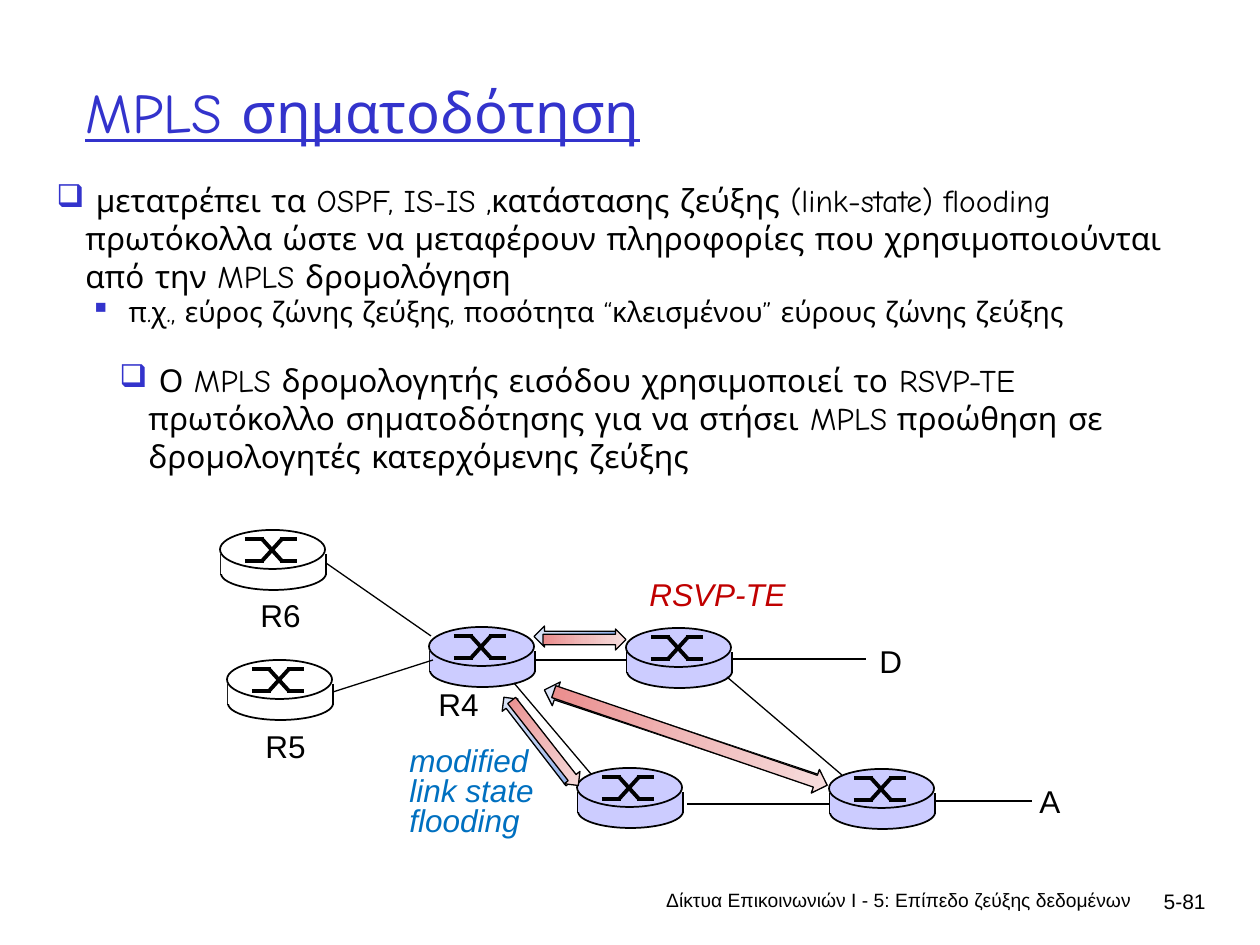
from copy import deepcopy

from lxml.etree import SubElement
from pptx import Presentation
from pptx.dml.color import RGBColor
from pptx.enum.shapes import MSO_CONNECTOR, MSO_SHAPE as Shape
from pptx.enum.text import MSO_ANCHOR as Anchor, PP_ALIGN as Align
from pptx.oxml.ns import qn
from pptx.util import Pt

EMU_PER_PX = 914400 / 126

BLACK = RGBColor(0x00, 0x00, 0x00)
WHITE = RGBColor(0xFF, 0xFF, 0xFF)
INDIGO = RGBColor(0x33, 0x33, 0xCC)
LAVENDER = RGBColor(0xCC, 0xCC, 0xFF)
BLUE = RGBColor(0x00, 0x70, 0xC0)
RED = RGBColor(0xC0, 0x00, 0x00)
BLUE_FADE = [RGBColor.from_string(c) for c in ("8CADEA", "BACCF0", "DEE6F7")]
RED_FADE = [RGBColor.from_string(c) for c in ("EA8C8C", "F0BABA", "F7DEDE")]

HANGING = 29


def px(length):
    return round(length * EMU_PER_PX)


def format_run(run, size, font, color, italic=False, underline=False):
    run.font.size = Pt(size)
    run.font.name = font
    run.font.color.rgb = color
    run.font.italic = italic
    run.font.underline = underline


def add_text(shapes, text, left, top, width, height, *, size=18, font="Arial",
             color=BLACK, italic=False, underline=False, align=Align.LEFT,
             anchor=Anchor.TOP, wrap=False, spacing=None):
    box = shapes.add_textbox(px(left), px(top), px(width), px(height))
    frame = box.text_frame
    frame.word_wrap = wrap
    frame.vertical_anchor = anchor
    for number, line in enumerate(text.split("\n")):
        paragraph = frame.add_paragraph() if number else frame.paragraphs[0]
        paragraph.alignment = align
        if spacing:
            paragraph.line_spacing = Pt(spacing)
        run = paragraph.add_run()
        run.text = line
        format_run(run, size, font, color, italic, underline)
    return frame


def add_bullet(paragraph, mark, margin):
    properties = paragraph._p.get_or_add_pPr()
    properties.set("marL", str(px(margin)))
    properties.set("indent", str(px(-HANGING)))
    bullet_color = SubElement(properties, qn("a:buClr"))
    SubElement(bullet_color, qn("a:srgbClr")).set("val", str(INDIGO))
    SubElement(properties, qn("a:buChar")).set("char", mark)


def add_line(shapes, x1, y1, x2, y2, weight=0.75):
    line = shapes.add_connector(MSO_CONNECTOR.STRAIGHT, px(x1), px(y1), px(x2), px(y2))
    line.line.color.rgb = BLACK
    line.line.width = Pt(weight)
    SubElement(line._element.spPr, qn("a:effectLst"))


def add_solid(shapes, kind, left, top, width, height, fill, outlined=True):
    solid = shapes.add_shape(kind, px(left), px(top), px(width), px(height))
    solid.shadow.inherit = False
    solid.fill.solid()
    solid.fill.fore_color.rgb = fill
    if outlined:
        solid.line.color.rgb = BLACK
        solid.line.width = Pt(1)
    else:
        solid.line.fill.background()


def add_router(slide, left, top, fill):
    parts = slide.shapes.add_group_shape().shapes
    # Cylinder: base, sides, body, lid
    add_solid(parts, Shape.OVAL, left + 1, top + 27, 105, 33, fill)
    for side in (left + 1, left + 106):
        add_line(parts, side, top + 24, side, top + 45, 1)
    add_solid(parts, Shape.RECTANGLE, left + 1, top + 24, 104, 20, fill, outlined=False)
    add_solid(parts, Shape.OVAL, left, top, 105, 39, fill)
    # Crossed paths on the lid
    upper, lower = top + 9, top + 31
    for start, end in ((upper, lower), (lower, upper)):
        add_line(parts, left + 25, start, left + 44, start, 2.25)
        add_line(parts, left + 42, start, left + 62, end, 2.25)
        add_line(parts, left + 60, end, left + 77, end, 2.25)


def add_flow(shapes, left, top, width, height, rotation, fade):
    arrow = shapes.add_shape(Shape.RIGHT_ARROW, px(left), px(top), px(width), px(height))
    arrow.rotation = rotation
    arrow.shadow.inherit = False
    arrow.line.color.rgb = BLACK
    arrow.line.width = Pt(0.75)
    arrow.fill.gradient()
    arrow.fill.gradient_angle = 0
    stop_list = arrow._element.spPr.find(qn("a:gradFill")).find(qn("a:gsLst"))
    stop_list.insert(1, deepcopy(stop_list[0]))
    for stop, position, color in zip(arrow.fill.gradient_stops, (0, 0.5, 1), fade):
        stop.position = position
        stop.color.rgb = color


def add_body(slide):
    points = [
        ("❑", 29, 18, 0, " μετατρέπει τα OSPF, IS-IS ,κατάστασης ζεύξης (link-state) flooding "
         "πρωτόκολλα ώστε να μεταφέρουν πληροφορίες που χρησιμοποιούνται από την MPLS δρομολόγηση"),
        ("▪", 63, 16, 0, " π.χ., εύρος ζώνης ζεύξης, ποσότητα “κλεισμένου” εύρους ζώνης ζεύξης"),
        ("❑", 92, 18, 19, " Ο MPLS δρομολογητής εισόδου χρησιμοποιεί το RSVP-TE πρωτόκολλο "
         "σηματοδότησης για να στήσει MPLS προώθηση σε δρομολογητές κατερχόμενης ζεύξης"),
    ]
    body = add_text(slide.shapes, "\n".join(point[-1] for point in points),
                    44, 175, 1157, 310, font="Comic Neue", wrap=True)
    for paragraph, (mark, margin, size, gap, _) in zip(body.paragraphs, points):
        paragraph.space_before = Pt(gap)
        paragraph.runs[0].font.size = Pt(size)
        add_bullet(paragraph, mark, margin)


def add_network(slide):
    shapes = slide.shapes
    # Routers
    for left, top, fill in ((829, 769, LAVENDER), (577, 768, LAVENDER), (626, 628, LAVENDER),
                            (429, 627, LAVENDER), (220, 530, WHITE), (227, 660, WHITE)):
        add_router(slide, left, top, fill)
    # Links
    for ends in ((326, 563, 431, 636), (333, 692, 433, 660), (535, 660, 626, 660),
                 (514, 683, 591, 774), (687, 804, 830, 804), (727, 677, 842, 775),
                 (935, 801, 1032, 801), (732, 659, 866, 659)):
        add_line(shapes, *ends)
    # Node names
    for name, left, top, width in (("D", 867, 636, 48), ("R4", 426, 679, 66), ("R5", 253, 721, 66),
                                   ("A", 1027, 776, 47), ("R6", 248, 590, 66)):
        add_text(shapes, name, left, top, width, 50)


def add_signalling(slide):
    shapes = slide.shapes
    # Link state flooding
    for flow in ((534, 626, 83, 21, 180), (483, 730, 108, 20, 232.3), (537, 723, 289, 25, 198.4)):
        add_flow(shapes, *flow, BLUE_FADE)
    add_text(shapes, "modified\nlink state\nflooding", 397, 743, 160, 103,
             color=BLUE, italic=True, spacing=17)
    # Reservation
    for flow in ((543, 629, 83, 21, 0), (491, 733, 108, 20, 51.9), (546, 726, 289, 25, 18.9)):
        add_flow(shapes, *flow, RED_FADE)
    add_text(shapes, "RSVP-TE", 637, 577, 164, 43, color=RED, italic=True, spacing=17)


def main():
    deck = Presentation()
    deck.slide_width, deck.slide_height = px(1260), px(945)
    slide = deck.slides.add_slide(deck.slide_layouts[6])

    add_text(slide.shapes, "MPLS σηματοδότηση", 73, 32, 1071, 158, size=32, font="Comic Neue",
             color=INDIGO, underline=True, anchor=Anchor.MIDDLE, wrap=True)
    add_body(slide)
    add_network(slide)
    add_signalling(slide)

    # Footer
    add_text(slide.shapes, "Δίκτυα Επικοινωνιών Ι - 5: Επίπεδο ζεύξης δεδομένων",
             534, 882, 610, 63, size=11, align=Align.RIGHT, wrap=True)
    add_text(slide.shapes, "5-81", 1125, 882, 93, 63, size=12, align=Align.RIGHT, wrap=True)

    deck.save("out.pptx")


if __name__ == "__main__":
    main()
